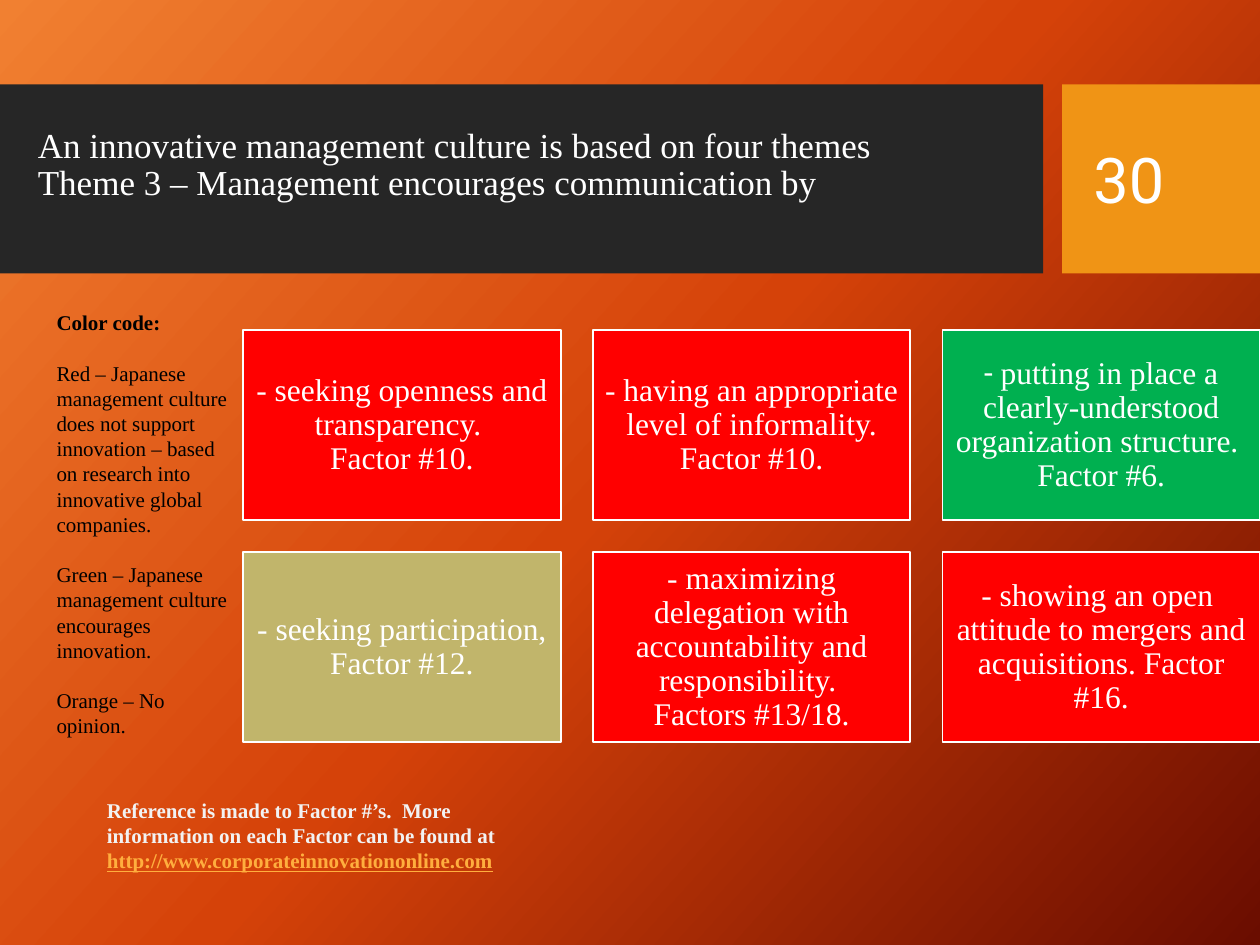
import copy

import lxml.etree
import pptx
import pptx.dml.color
import pptx.enum.shapes
import pptx.enum.text
import pptx.oxml
import pptx.oxml.ns
import pptx.util

COLORS = {
    "white": "FFFFFF", "black": "000000", "pale": "F2F2F2", "link": "FFAE3E",
    "banner": "262626", "number": "F09415",
    "red": "FF0000", "green": "00B050", "neutral": "C1B56B",
}
BACKDROP = [(0, "F18031"), (50, "D54209"), (100, "6A0D00")]
SERIF, SANS = "Times New Roman", "Roboto"
ALIGN = pptx.enum.text.PP_ALIGN
MIDDLE = pptx.enum.text.MSO_ANCHOR.MIDDLE
FIT = pptx.enum.text.MSO_AUTO_SIZE


def rgb(name):
    return pptx.dml.color.RGBColor.from_string(COLORS[name])


class SlideBuilder:
    """Places elements on a grid of 100 columns by 75 rows."""

    def __init__(self):
        self.deck = pptx.Presentation()
        self.deck.slide_width = pptx.util.Inches(10)
        self.deck.slide_height = pptx.util.Inches(7.5)
        self.cell = self.deck.slide_width / 100
        self.slide = self.deck.slides.add_slide(self.deck.slide_layouts[5])

    def grid(self, *cells):
        return [round(value * self.cell) for value in cells]

    def backdrop(self, stops, angle):
        self.slide.background.fill.gradient()
        qn = pptx.oxml.ns.qn
        gradient = self.slide.element.find(".//" + qn("a:gradFill"))
        for child in list(gradient):
            gradient.remove(child)
        stop_list = lxml.etree.SubElement(gradient, qn("a:gsLst"))
        for position, color in stops:
            stop = lxml.etree.SubElement(stop_list, qn("a:gs"), pos=str(position * 1000))
            lxml.etree.SubElement(stop, qn("a:srgbClr"), val=color)
        lxml.etree.SubElement(gradient, qn("a:lin"), ang=str(angle * 60000), scaled="0")

    def set_text(self, paragraph, text, size, color, font=SERIF, bold=False,
                 align=ALIGN.LEFT, spacing=None, after=0):
        paragraph.text = text
        paragraph.alignment = align
        paragraph.line_spacing = spacing
        paragraph.space_before = pptx.util.Pt(0)
        paragraph.space_after = pptx.util.Pt(after)
        for run in paragraph.runs:
            run.font.name, run.font.size = font, pptx.util.Pt(size)
            run.font.bold = bold
            run.font.color.rgb = rgb(color)
        # Line breaks carry the size of the text around them
        for line_break in paragraph._p.findall(pptx.oxml.ns.qn("a:br")):
            line_break.insert(0, copy.deepcopy(paragraph.runs[0]._r.rPr))
        return paragraph

    def title(self, text, *cells):
        heading = self.slide.shapes.title
        heading.left, heading.top, heading.width, heading.height = self.grid(*cells)
        heading.text_frame.vertical_anchor = MIDDLE
        heading.text_frame.auto_size = FIT.NONE
        self.set_text(heading.text_frame.paragraphs[0], text, 20, "white", spacing=0.9)

    def block(self, fill, *cells, line=None):
        block = self.slide.shapes.add_shape(
            pptx.enum.shapes.MSO_SHAPE.RECTANGLE, *self.grid(*cells))
        block.shadow.inherit = False
        block.fill.solid()
        block.fill.fore_color.rgb = rgb(fill)
        if line:
            block.line.color.rgb = rgb(line)
            block.line.width = pptx.util.Pt(1)
        else:
            block.line.fill.background()
        return block

    def band(self, fill, *cells):
        """A block that lies behind the title."""
        band = self.block(fill, *cells)
        self.slide.shapes.title.element.addprevious(band.element)

    def card(self, fill, text, *cells):
        frame = self.block(fill, *cells, line="white").text_frame
        frame.word_wrap = True
        frame.vertical_anchor = MIDDLE
        frame.margin_left = frame.margin_right = pptx.util.Inches(0.07)
        frame.margin_top = frame.margin_bottom = pptx.util.Inches(0.07)
        return self.set_text(frame.paragraphs[0], text, 18, "white",
                             align=ALIGN.CENTER, spacing=0.9)

    def text_box(self, *cells, fit=FIT.SHAPE_TO_FIT_TEXT):
        frame = self.slide.shapes.add_textbox(*self.grid(*cells)).text_frame
        frame.word_wrap = True
        frame.auto_size = fit
        return frame


def main():
    page = SlideBuilder()
    page.backdrop(BACKDROP, 42)

    # Banner, title and page number
    page.band("banner", 0, 6.7, 82.8, 15)
    page.band("number", 84.3, 6.7, 15.7, 15)
    page.title("An innovative management culture is based on four themes\v"
               "Theme 3 – Management encourages communication by", 2, 6.9, 76.4, 12.5)
    page_number = page.text_box(85.8, 8.2, 12.7, 11.9, fit=FIT.NONE)
    page_number.vertical_anchor = MIDDLE
    page.set_text(page_number.paragraphs[0], "30", 36, "white", font=SANS)

    # Ways of encouraging communication, three to a row
    practices = [
        ("red", "- seeking openness and transparency. \vFactor #10."),
        ("red", "- having an appropriate level of informality. Factor #10."),
        ("green", "putting in place a clearly-understood organization structure. \vFactor #6."),
        ("neutral", "- seeking participation, Factor #12."),
        ("red", "- maximizing delegation with accountability and responsibility. \vFactors #13/18."),
        ("red", "- showing an open  attitude to mergers and acquisitions. Factor #16."),
    ]
    width, height, gap = 25.2, 15.1, 2.5
    for index, (fill, text) in enumerate(practices):
        row, column = divmod(index, 3)
        practice = page.card(fill, text, 19.3 + column * (width + gap + 0.05),
                             26.2 + row * (height + gap), width, height)
        if fill == "green":
            # This card's dash is set in the sans font
            dash = practice.add_run()
            dash.text = "- "
            dash.font.name, dash.font.size = SANS, pptx.util.Pt(18)
            dash.font.color.rgb = rgb("white")
            practice.runs[0]._r.addprevious(dash._r)

    # Reference
    reference = page.text_box(7.5, 62.8, 34.9, 7.1)
    page.set_text(reference.paragraphs[0], "Reference is made to Factor #’s.  More "
                  "information on each Factor can be found at", 12, "pale", bold=True)
    address = page.set_text(reference.add_paragraph(),
                            "http://www.corporateinnovationonline.com", 12, "link", bold=True)
    address.runs[0].font.underline = True

    # Color code
    legend = page.text_box(3.5, 24.1, 15.8, 35.3)
    page.set_text(legend.paragraphs[0], "Color code:", 12, "black", bold=True, after=14.4)
    meanings = [
        "Red – Japanese management culture does not support innovation – based on "
        "research into innovative global companies.",
        "Green – Japanese management culture encourages innovation.",
        "Orange – No opinion.",
    ]
    for meaning in meanings:
        after = 0 if meaning == meanings[-1] else 14.4
        page.set_text(legend.add_paragraph(), meaning, 12, "black", after=after)

    page.deck.save("out.pptx")


if __name__ == "__main__":
    main()
